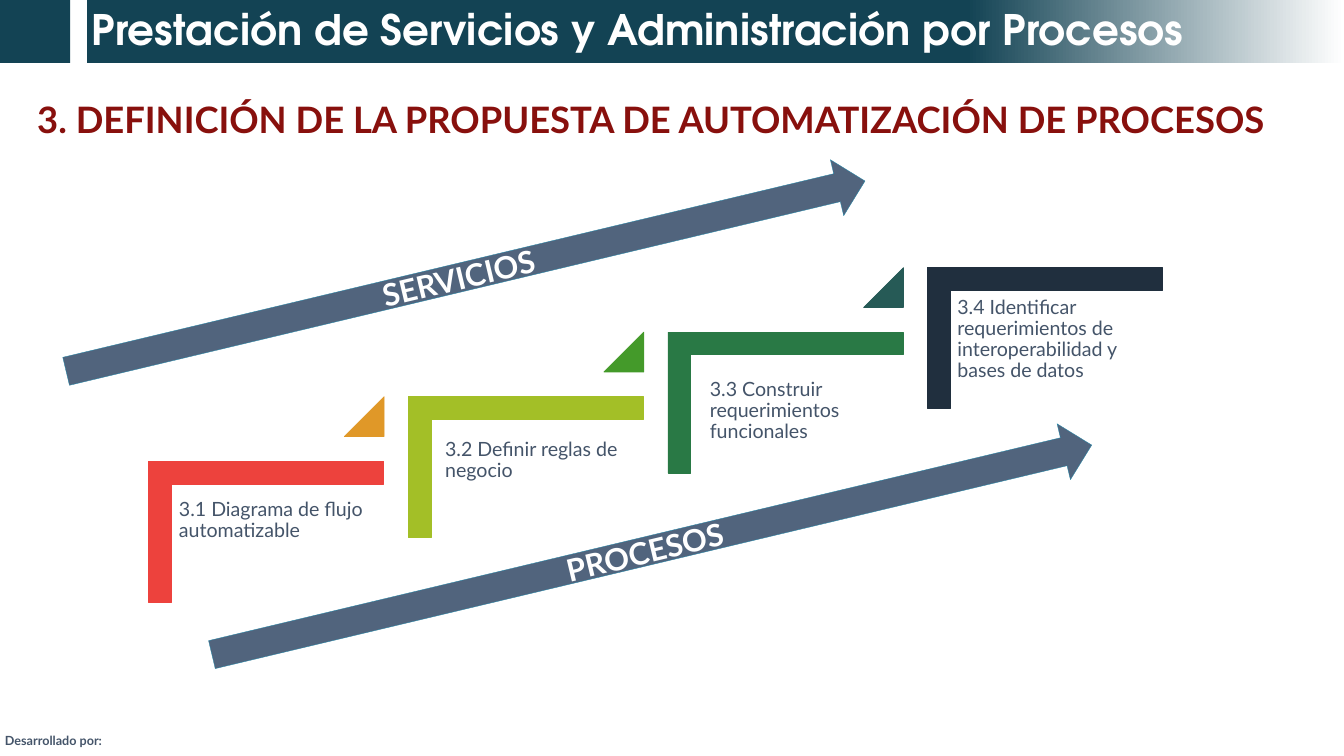
import dataclasses

import pptx
import pptx.dml.color
import pptx.enum.shapes
import pptx.enum.text
import pptx.util

Inches = pptx.util.Inches
Shapes = pptx.enum.shapes.MSO_SHAPE
Anchor = pptx.enum.text.MSO_ANCHOR
Align = pptx.enum.text.PP_ALIGN

TEAL, SLATE, WHITE, MAROON = "134354", "445469", "FFFFFF", "88100D"
ARROW_FILL, ARROW_LINE = "51647D", "2686A7"
BODY_FONT, TITLE_FONT = "Lato", "TeX Gyre Adventor"


@dataclasses.dataclass
class Box:
    left: float
    top: float
    width: float
    height: float

    def lengths(self) -> tuple:
        return tuple(Inches(v) for v in dataclasses.astuple(self))


@dataclasses.dataclass
class Step:
    label: str
    color: str
    label_left: float
    label_top: float
    riser_color: str = ""  # triangle leading up to the next step


@dataclasses.dataclass
class Trend:
    label: str
    box: Box


def rgb(color: str) -> pptx.dml.color.RGBColor:
    return pptx.dml.color.RGBColor.from_string(color)


def add_block(slide, kind, box: Box, fill: str, line: str = "", line_width: float = 1):
    block = slide.shapes.add_shape(kind, *box.lengths())
    block.shadow.inherit = False
    block.fill.solid()
    block.fill.fore_color.rgb = rgb(fill)
    if line:
        block.line.color.rgb = rgb(line)
        block.line.width = pptx.util.Pt(line_width)
    else:
        block.line.fill.background()
    return block


def write(shape, text: str, size: float, color: str, bold: bool = False,
          font: str = BODY_FONT, align=Align.LEFT, anchor=Anchor.TOP,
          wrap: bool = True, spacing: float = 1.0) -> None:
    frame = shape.text_frame
    frame.word_wrap = wrap
    frame.vertical_anchor = anchor
    if not wrap:
        frame.auto_size = pptx.enum.text.MSO_AUTO_SIZE.SHAPE_TO_FIT_TEXT
    paragraph = frame.paragraphs[0]
    paragraph.alignment = align
    paragraph.line_spacing = spacing
    run = paragraph.add_run()
    run.text = text
    run.font.name = font
    run.font.size = pptx.util.Pt(size)
    run.font.bold = bold
    run.font.color.rgb = rgb(color)


def add_label(slide, box: Box, text: str, size: float, color: str, **style):
    label = slide.shapes.add_textbox(*box.lengths())
    write(label, text, size, color, **style)
    return label


def add_step(slide, index: int, step: Step) -> None:
    left, top = 3.88 + 5.15 * index, 8.22 - 1.28 * index
    corner = add_block(slide, Shapes.CORNER, Box(left, top, 2.8, 4.66),
                       step.color, step.color)
    corner.rotation = 90
    corner.adjustments[0] = corner.adjustments[1] = 0.161

    label = add_label(slide, Box(step.label_left, step.label_top, 4.21, 3.69),
                      step.label, 28, SLATE, spacing=0.9)
    frame = label.text_frame
    frame.margin_left = frame.margin_right = Inches(0.12)
    frame.margin_top = frame.margin_bottom = Inches(0.12)

    if step.riser_color:
        riser = add_block(slide, Shapes.ISOSCELES_TRIANGLE,
                          Box(left + 2.95, top - 0.35, 0.79, 0.79),
                          step.riser_color, step.riser_color)
        riser.adjustments[0] = 1


def add_trend(slide, trend: Trend) -> None:
    arrow = add_block(slide, Shapes.RIGHT_ARROW, trend.box, ARROW_FILL, ARROW_LINE, 0.5)
    arrow.rotation = 346.6
    write(arrow, trend.label, 44, WHITE, bold=True, align=Align.CENTER,
          anchor=Anchor.MIDDLE)


STEPS = [
    Step("3.1 Diagrama de flujo automatizable", "ED423D", 3.43, 9.79, "E09828"),
    Step("3.2 Definir reglas de negocio", "A3BF27", 8.71, 8.6, "449A2A"),
    Step("3.3 Construir requerimientos funcionales", "297945", 13.96, 7.41, "265A56"),
    Step("3.4 Identificar requerimientos de interoperabilidad y bases de datos",
         "202F3E", 18.87, 5.78),
]
TRENDS = [
    Trend("SERVICIOS", Box(1.09, 4.91, 16.29, 1.14)),
    Trend("PROCESOS", Box(3.96, 10.34, 17.94, 1.14)),
]


def main() -> None:
    deck = pptx.Presentation()
    deck.slide_width, deck.slide_height = Inches(26.66), Inches(15)
    slide = deck.slides.add_slide(deck.slide_layouts[6])

    # Footer credit
    add_label(slide, Box(0, 14.5, 2.31, 0.4), "Desarrollado por:", 18, SLATE,
              bold=True, wrap=False)

    # Title band, fading to white on the right
    add_block(slide, Shapes.RECTANGLE, Box(-0.02, -0.01, 1.41, 1.26), TEAL)
    band = add_block(slide, Shapes.RECTANGLE, Box(1.72, 0.01, 24.94, 1.24), TEAL)
    band.fill.gradient()
    band.fill.gradient_angle = 0
    for stop, position, color in zip(band.fill.gradient_stops, (0.7, 1), (TEAL, WHITE)):
        stop.position = position
        stop.color.rgb = rgb(color)
    write(band, "Prestación de Servicios y Administración por Procesos", 60, WHITE,
          bold=True, font=TITLE_FONT, anchor=Anchor.MIDDLE, spacing=0.9)

    # Staircase of steps
    for index, step in enumerate(STEPS):
        add_step(slide, index, step)

    # Section heading
    add_label(slide, Box(0.64, 1.88, 25.76, 0.98),
              "3. DEFINICIÓN DE LA PROPUESTA DE AUTOMATIZACIÓN DE PROCESOS",
              52, MAROON, bold=True, wrap=False)

    # Rising arrows
    for trend in TRENDS:
        add_trend(slide, trend)

    deck.save("out.pptx")


if __name__ == "__main__":
    main()
